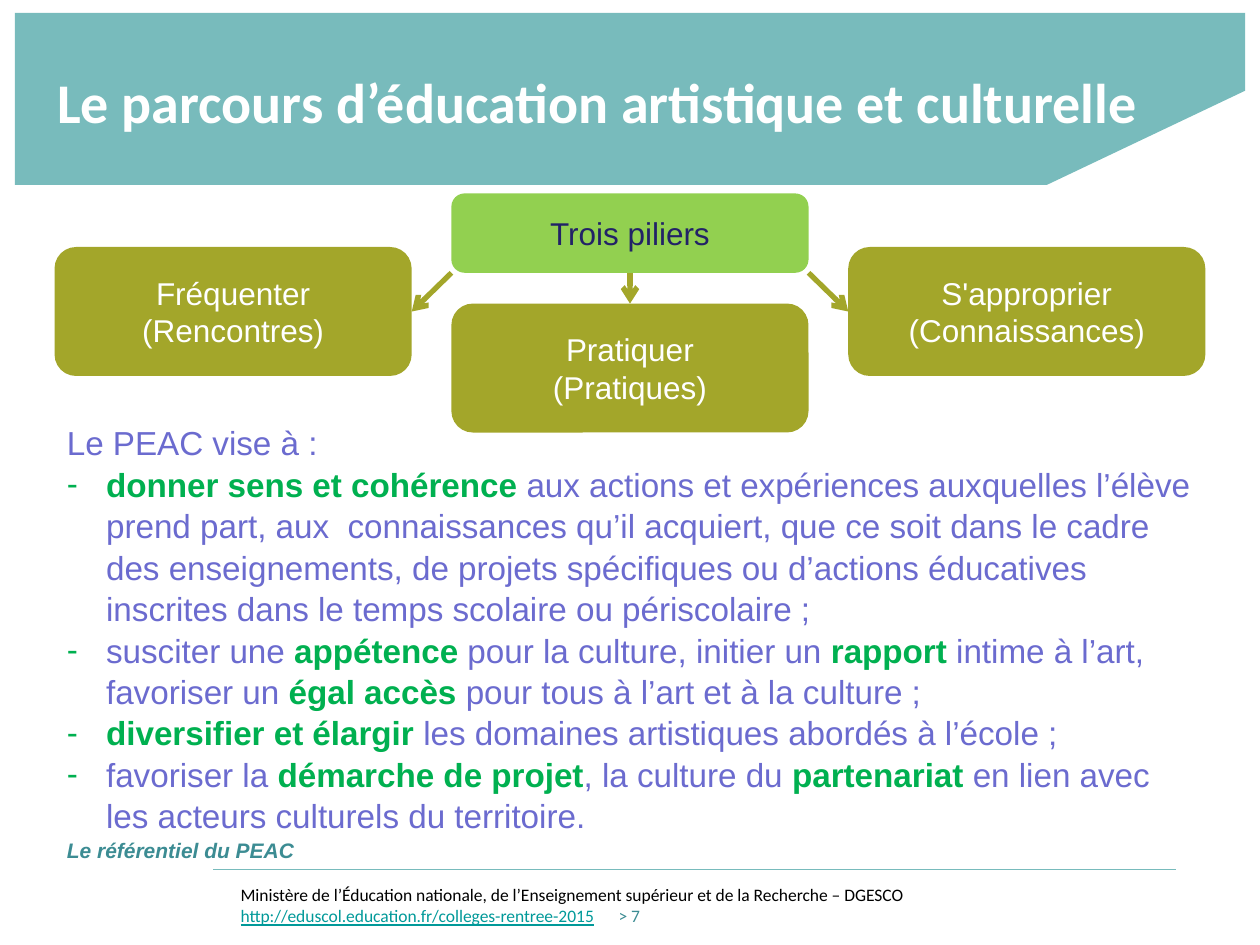
import pptx
import pptx.util
import pptx.dml.color
import pptx.enum.shapes
import pptx.enum.text
import pptx.oxml
import pptx.oxml.ns

Cm, Pt = pptx.util.Cm, pptx.util.Pt
SHAPE = pptx.enum.shapes.MSO_SHAPE
ALIGN = pptx.enum.text.PP_ALIGN
ANCHOR = pptx.enum.text.MSO_ANCHOR

COLORS = {
    "banner": "78BBBC", "accent": "92D050", "pillar": "A3A62A", "navy": "222267",
    "body": "6B6BCF", "strong": "00B050", "teal": "3C8C93", "link": "009999",
    "black": "000000", "white": "FFFFFF",
}

TITLE = "Le parcours d’éducation artistique et culturelle"
HEADING = "Trois piliers"
PILLARS = [
    (["Fréquenter", "(Rencontres)"], 4.98),
    (["Pratiquer", "(Pratiques)"], 6.12),
    (["S'approprier", "(Connaissances)"], 4.98),
]
STRONG = {"color": "strong", "bold": True}
INTRO = "Le PEAC vise à :"
AIMS = [
    [("donner sens et cohérence ", STRONG),
     "aux actions et expériences auxquelles l’élève prend part, aux  connaissances "
     "qu’il acquiert, que ce soit dans le cadre des enseignements, de projets "
     "spécifiques ou d’actions éducatives inscrites dans le temps scolaire ou "
     "périscolaire ;"],
    ["susciter une ", ("appétence", STRONG), " pour la culture, initier un ",
     ("rapport", STRONG), " intime à l’art, favoriser un ", ("égal accès ", STRONG),
     "pour tous à l’art et à la culture ;"],
    [("diversifier et élargir ", STRONG), "les domaines artistiques abordés à l’école ;"],
    ["favoriser la ", ("démarche de projet", STRONG), ", la culture du ",
     ("partenariat ", STRONG), "en lien avec les acteurs culturels du territoire."],
]
REFERENCE = "Le référentiel du PEAC"
FOOTER = [
    "Ministère de l’Éducation nationale, de l’Enseignement supérieur et de la Recherche – DGESCO",
    [("http://eduscol.education.fr/colleges-rentree-2015", {"color": "link", "underline": True}),
     ("\t> 7", {"color": "teal"})],
]

MARGIN, PILLAR_W, PILLAR_H, GAP = 1.1, 7.2, 2.6, 0.8
HEADING_TOP, HEADING_H = 3.9, 1.6
HEADING_LEFT = MARGIN + PILLAR_W + GAP


def rgb(name):
    return pptx.dml.color.RGBColor.from_string(COLORS[name])


def add_xml(parent, xml):
    parent.append(pptx.oxml.parse_xml(
        xml.replace("/>", " " + pptx.oxml.ns.nsdecls("a") + "/>", 1)
        if xml.endswith("/>") and xml.count("<") == 1
        else xml.replace(">", " " + pptx.oxml.ns.nsdecls("a") + ">", 1)))


def write(frame, paragraphs, size, color, font="Arial", bold=False, italic=False,
          align=ALIGN.LEFT, anchor=ANCHOR.TOP, wrap=True, spacing=None,
          bullets_from=None, tab=None):
    frame.word_wrap = wrap
    frame.vertical_anchor = anchor
    for index, content in enumerate(paragraphs):
        paragraph = frame.paragraphs[0] if index == 0 else frame.add_paragraph()
        paragraph.alignment = align
        if spacing:
            paragraph.line_spacing = spacing
        properties = paragraph._p.get_or_add_pPr()
        if bullets_from is not None and index >= bullets_from:
            properties.set("marL", str(Cm(0.79)))
            properties.set("indent", str(-Cm(0.79)))
            add_xml(properties, f'<a:buClr><a:srgbClr val="{COLORS["strong"]}"/></a:buClr>')
            add_xml(properties, '<a:buFont typeface="Arial"/>')
            add_xml(properties, '<a:buChar char="-"/>')
        if tab:
            add_xml(properties, f'<a:tabLst><a:tab pos="{Cm(tab)}" algn="l"/></a:tabLst>')
        for piece in [content] if isinstance(content, str) else content:
            text, style = (piece, {}) if isinstance(piece, str) else piece
            run = paragraph.add_run()
            run.text = text
            run.font.name = font
            run.font.size = Pt(size)
            run.font.bold = style.get("bold", bold)
            run.font.italic = italic
            run.font.underline = style.get("underline", False)
            run.font.color.rgb = rgb(style.get("color", color))


def paint(shape, color):
    shape.shadow.inherit = False
    shape.fill.solid()
    shape.fill.fore_color.rgb = rgb(color)
    shape.line.fill.background()


def add_box(slide, paragraphs, left, top, height, fill, color):
    box = slide.shapes.add_shape(SHAPE.ROUNDED_RECTANGLE, Cm(left), Cm(top),
                                 Cm(PILLAR_W), Cm(height))
    paint(box, fill)
    write(box.text_frame, paragraphs, 18, color, align=ALIGN.CENTER, anchor=ANCHOR.MIDDLE)
    return box


def add_line(slide, start, end, color, width, arrow=False):
    line = slide.shapes.add_connector(pptx.enum.shapes.MSO_CONNECTOR.STRAIGHT,
                                      *(Cm(value) for value in start + end))
    line.line.color.rgb = rgb(color)
    line.line.width = Pt(width)
    if arrow:
        add_xml(line.line._get_or_add_ln(), '<a:tailEnd type="arrow"/>')
    add_xml(line._element.spPr, "<a:effectLst/>")
    return line


def add_text(slide, paragraphs, left, top, width, height, **style):
    box = slide.shapes.add_textbox(Cm(left), Cm(top), Cm(width), Cm(height))
    write(box.text_frame, paragraphs, **style)


def main():
    deck = pptx.Presentation()
    deck.slide_width, deck.slide_height = Cm(25.4), Cm(19.05)
    slide = deck.slides.add_slide(deck.slide_layouts[5])

    outline = slide.shapes.build_freeform(Cm(25.1), Cm(0.26))
    corners = [(0.3, 0.26), (0.3, 3.73), (21.1, 3.73), (25.1, 1.83)]
    outline.add_line_segments([(Cm(x), Cm(y)) for x, y in corners], close=True)
    banner = outline.convert_to_shape()
    paint(banner, "banner")

    title = slide.shapes.title
    title.left, title.top, title.width, title.height = Cm(0.9), Cm(0.33), Cm(22.83), Cm(3.4)
    write(title.text_frame, [TITLE], 32, "white", font="Calibri", bold=True,
          anchor=ANCHOR.MIDDLE)
    banner._element.addnext(title._element)

    add_line(slide, (4.3, 17.53), (23.7, 17.53), "banner", 0.75)
    add_text(slide, FOOTER, 4.6, 17.7, 19.7, 1.35, size=10, color="black",
             font="Calibri", tab=7.62)

    heading = add_box(slide, [HEADING], HEADING_LEFT, HEADING_TOP, HEADING_H,
                      "accent", "navy")
    pillars = [
        add_box(slide, text, MARGIN + column * (PILLAR_W + GAP), top, PILLAR_H,
                "pillar", "white")
        for column, (text, top) in enumerate(PILLARS)
    ]

    heading_bottom = HEADING_TOP + HEADING_H
    for column, (pillar, side) in enumerate(zip(pillars, (3, 0, 1))):
        start = (HEADING_LEFT + column * PILLAR_W / 2, heading_bottom)
        arrow = add_line(slide, start, start, "pillar", 3, arrow=True)
        if column == 1:
            arrow.begin_connect(heading, 2)
        arrow.end_connect(pillar, side)

    add_text(slide, [INTRO] + AIMS, MARGIN, 8.36, 23.2, 8.38, size=19, color="body",
             spacing=1.04, bullets_from=1)
    add_text(slide, [REFERENCE], 1.1, 16.76, 5.16, 0.76, size=12, color="teal",
             bold=True, italic=True, wrap=False)

    deck.save("out.pptx")


if __name__ == "__main__":
    main()
